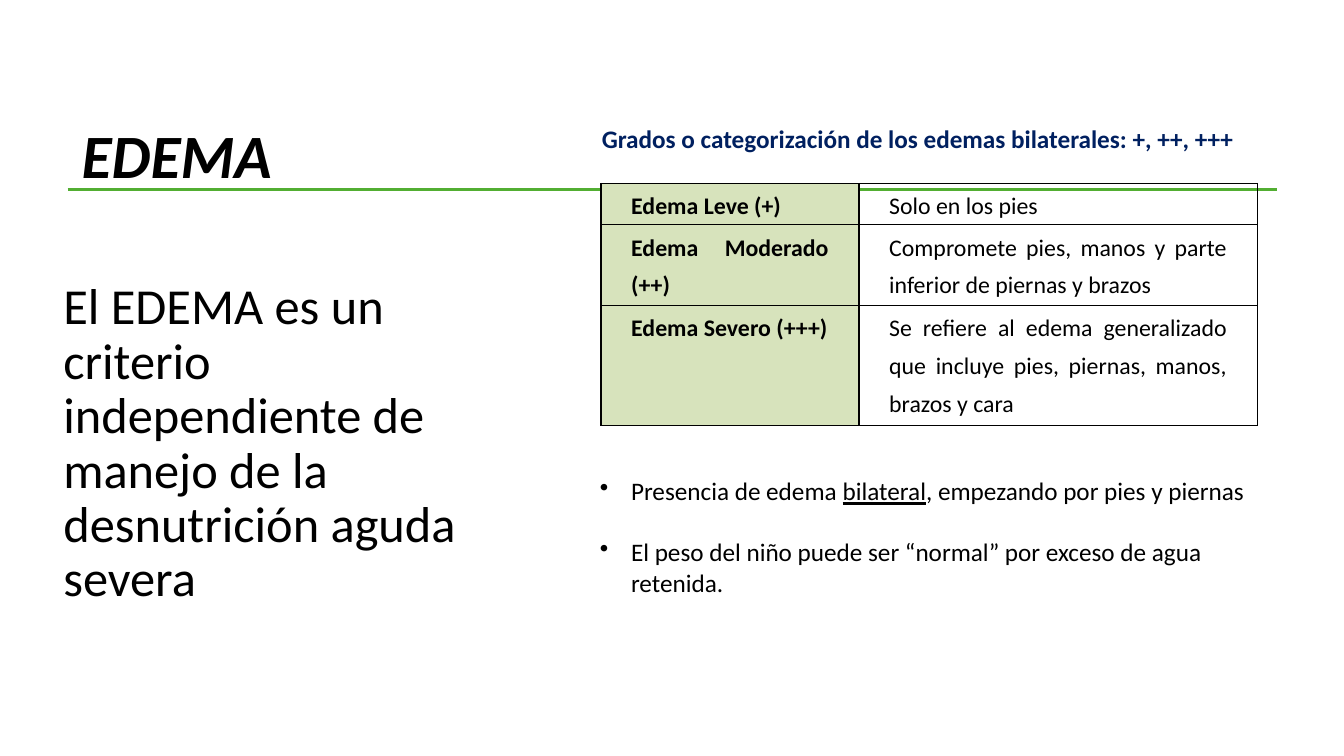
from lxml.etree import SubElement
from pptx import Presentation
from pptx.dml.color import RGBColor
from pptx.enum.shapes import MSO_CONNECTOR
from pptx.enum.text import MSO_ANCHOR, PP_ALIGN
from pptx.oxml.ns import qn
from pptx.util import Inches, Pt

FONT = "Calibri"
WIDTH, HEIGHT = Inches(13.33), Inches(7.5)
COLORS = {"text": "000000", "rule": "52AE32", "caption": "002060", "grade": "D7E3BC"}
GRADES = [
    ("Edema Leve (+)", "Solo en los pies"),
    ("Edema Moderado (++)", "Compromete pies, manos y parte inferior de piernas y brazos"),
    ("Edema Severo (+++)",
     "Se refiere al edema generalizado que incluye pies, piernas, manos, brazos y cara"),
]
COLUMN_SHARES = (19.2, 29.63)
ROW_SHARES = (5.47, 10.67, 15.87)
SIGNS = [
    [("Presencia de edema ", False), ("bilateral", True),
     (", empezando por pies y piernas", False)],
    [("El peso del niño puede ser “normal” por exceso de agua retenida.", False)],
]


def across(percent):
    """Return a share of the slide's width."""
    return int(WIDTH * percent / 100)


def down(percent):
    """Return a share of the slide's height."""
    return int(HEIGHT * percent / 100)


def area(left, top, width, height):
    """Turn percentages of the slide into a position and a size."""
    return across(left), down(top), across(width), down(height)


def color(name):
    """Look up a palette colour."""
    return RGBColor.from_string(COLORS[name])


def format_runs(paragraph, size, name="text", bold=False, italic=False):
    """Give every run of a paragraph the same font."""
    for run in paragraph.runs:
        run.font.name, run.font.size = FONT, Pt(size)
        run.font.bold, run.font.italic = bold, italic
        run.font.color.rgb = color(name)


def indent(paragraph, left, first=0, right=0):
    """Set paragraph indents in inches."""
    properties = paragraph._p.get_or_add_pPr()
    for key, inches in (("marL", left), ("marR", right), ("indent", first)):
        properties.set(key, str(Inches(inches)))
    return properties


def add_title(slide, text, box):
    """Place and format the slide title."""
    title = slide.shapes.title
    title.left, title.top, title.width, title.height = box
    title.text_frame.text = text
    title.text_frame.vertical_anchor = MSO_ANCHOR.MIDDLE
    heading = title.text_frame.paragraphs[0]
    heading.alignment, heading.line_spacing = PP_ALIGN.LEFT, 0.9
    format_runs(heading, 44, bold=True, italic=True)


def add_rule(slide, start, end, height):
    """Draw the horizontal rule under the title."""
    rule = slide.shapes.add_connector(
        MSO_CONNECTOR.STRAIGHT, across(start), down(height), across(end), down(height))
    rule.line.color.rgb, rule.line.width = color("rule"), Pt(2)
    SubElement(rule._element.spPr, qn("a:effectLst"))


def add_text(slide, text, box, size, name="text", bold=False):
    """Add a wrapped text box with one paragraph and return its frame."""
    frame = slide.shapes.add_textbox(*box).text_frame
    frame.word_wrap = True
    frame.text = text
    format_runs(frame.paragraphs[0], size, name, bold)
    return frame


def add_bullets(slide, items, box, size):
    """Add a bulleted list whose runs may be underlined."""
    frame = add_text(slide, "", box, size)
    for number, pieces in enumerate(items):
        item = frame.add_paragraph() if number else frame.paragraphs[0]
        if number:
            item.space_before = Pt(22)
        SubElement(indent(item, 0.31, -0.31), qn("a:buChar"), char="•")
        for words, underlined in pieces:
            run = item.add_run()
            run.text, run.font.underline = words, underlined
        format_runs(item, size)


def add_borders(cell):
    """Draw a thin line on the four sides of a cell."""
    properties = cell._tc.get_or_add_tcPr()
    for side in ("lnL", "lnR", "lnT", "lnB"):
        edge = SubElement(properties, qn(f"a:{side}"), w=str(Pt(1)))
        fill = SubElement(edge, qn("a:solidFill"))
        SubElement(fill, qn("a:srgbClr"), val=COLORS["text"])


def fill_cell(cell, text, is_grade):
    """Write and format one cell of the grades table."""
    add_borders(cell)
    if is_grade:
        cell.fill.solid()
        cell.fill.fore_color.rgb = color("grade")
    else:
        cell.fill.background()
    cell.margin_top = cell.margin_bottom = 0
    cell.text_frame.text = text
    entry = cell.text_frame.paragraphs[0]
    indent(entry, 0.2, right=0.2)
    entry.alignment = PP_ALIGN.JUSTIFY
    entry.line_spacing, entry.space_after = 1.3, Pt(4)
    format_runs(entry, 17, bold=is_grade)


def add_grades(slide, left, top):
    """Add the table of edema grades."""
    box = area(left, top, sum(COLUMN_SHARES), sum(ROW_SHARES))
    grades = slide.shapes.add_table(len(GRADES), len(COLUMN_SHARES), *box).table
    grades.first_row = grades.horz_banding = False
    for column, share in zip(grades.columns, COLUMN_SHARES):
        column.width = across(share)
    for row, share, texts in zip(grades.rows, ROW_SHARES, GRADES):
        row.height = down(share)
        for position, (cell, text) in enumerate(zip(row.cells, texts)):
            fill_cell(cell, text, position == 0)


def main():
    """Build and save the slide."""
    deck = Presentation()
    deck.slide_width, deck.slide_height = WIDTH, HEIGHT
    slide = deck.slides.add_slide(deck.slide_layouts[5])
    add_rule(slide, 5.03, 95.05, 25.07)
    add_title(slide, "EDEMA", area(5.33, 9.2, 28.73, 23.6))
    criterion = add_text(
        slide, "El EDEMA es un criterio independiente de manejo de la desnutrición aguda severa",
        area(2.1, 30.13, 34.88, 64.4), 36)
    criterion.margin_top = Inches(0.53)
    indent(criterion.paragraphs[0], 0.25)
    criterion.paragraphs[0].line_spacing = 0.9
    add_grades(slide, 44.71, 24.27)
    add_text(slide, "Grados o categorización de los edemas bilaterales: +, ++, +++",
             area(44.04, 15.6, 48.84, 5.33), 18, "caption", bold=True)
    add_bullets(slide, SIGNS, area(43.89, 62.27, 51.31, 21.07), 18)
    deck.save("out.pptx")


if __name__ == "__main__":
    main()
